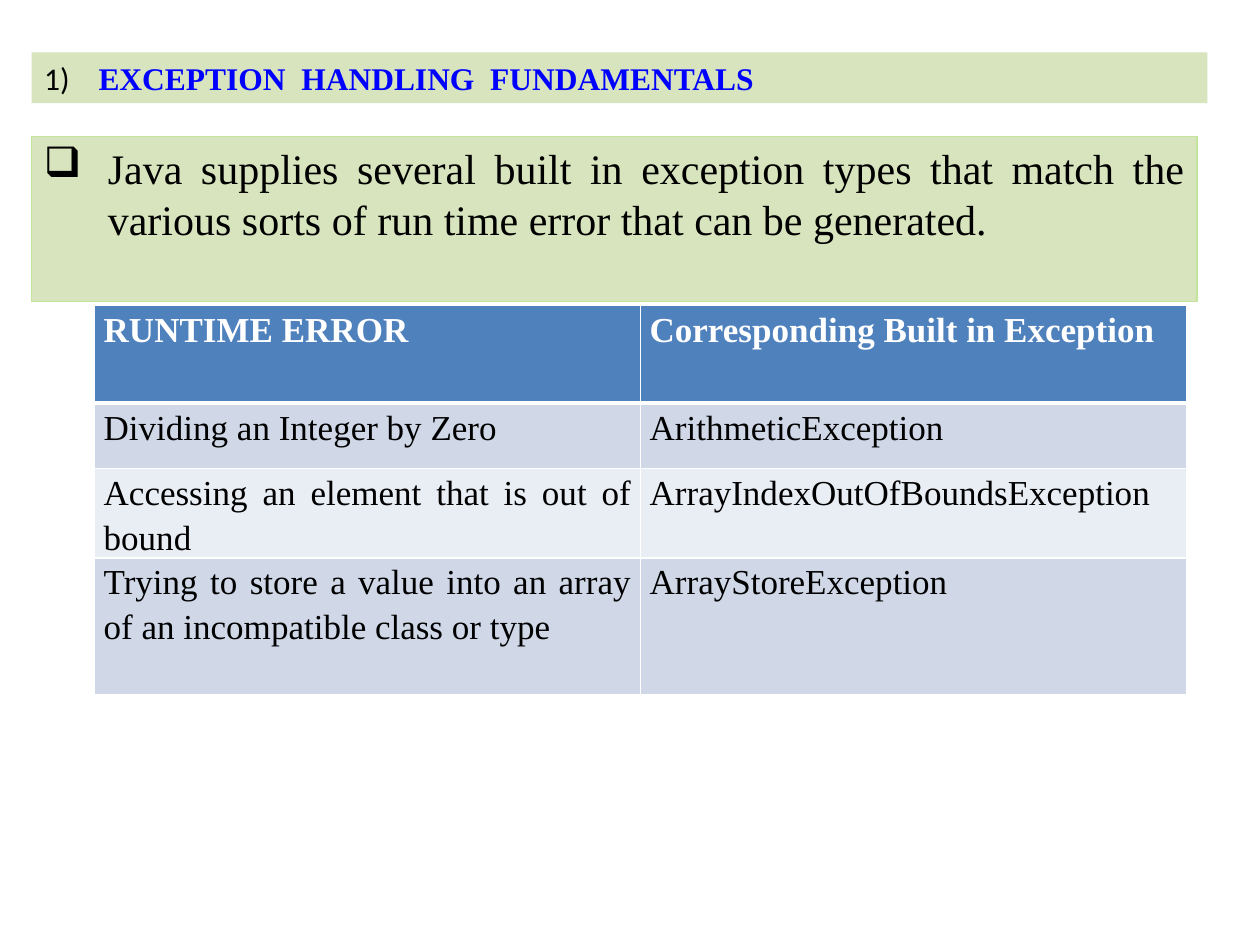
"""Build the slide on exception handling fundamentals."""
from lxml import etree
from pptx import Presentation
from pptx.dml.color import RGBColor
from pptx.enum import shapes, text
from pptx.oxml.ns import qn
from pptx.util import Pt

HUE = {"band": "D7E4BD", "edge": "C2E49C", "blue": "0000FF", "ink": "000000",
       "white": "FFFFFF", "head": "4F81BD", "odd": "D0D8E8", "even": "E9EDF4"}
SERIF = "Times New Roman"
TITLE = "EXCEPTION  HANDLING  FUNDAMENTALS"
BODY = ("Java supplies several built in exception types that match the "
        "various sorts of run time error that can be generated.")
ROWS = [
    (56, "RUNTIME ERROR", "Corresponding Built in Exception"),
    (37.5, "Dividing an Integer by Zero", "ArithmeticException"),
    (50, "Accessing an element that is out of bound",
     "ArrayIndexOutOfBoundsException"),
    (78.5, "Trying to store a value into an array of an incompatible class or type",
     "ArrayStoreException"),
]


def rgb(name):
    return RGBColor.from_string(HUE[name])


def paint(item, name):
    item.fill.solid()
    item.fill.fore_color.rgb = rgb(name)


def add_run(para, words, size, hue, font=SERIF, bold=False):
    run = para.add_run()
    run.text = words
    run.font.size, run.font.name, run.font.bold = Pt(size), font, bold
    run.font.color.rgb = rgb(hue)


def set_list(para, indent, tag, **attrs):
    props = para._p.get_or_add_pPr()
    props.set("marL", str(Pt(indent)))
    props.set("indent", str(-Pt(indent)))
    etree.SubElement(props, qn(tag), attrs)


def set_frame(shape, box):
    shape.left, shape.top, shape.width, shape.height = map(Pt, box)
    paint(shape, "band")
    frame = shape.text_frame
    frame.word_wrap = True
    frame.auto_size = text.MSO_AUTO_SIZE.NONE
    frame.vertical_anchor = text.MSO_ANCHOR.TOP
    return frame.paragraphs[0]


def set_edges(cell, base):
    props = cell._tc.get_or_add_tcPr()
    for spot, side in enumerate("LRTB"):
        width = base if side == "B" else 1
        line = etree.Element(qn("a:ln" + side), w=str(Pt(width)))
        fill = etree.SubElement(line, qn("a:solidFill"))
        etree.SubElement(fill, qn("a:srgbClr"), val=HUE["white"])
        props.insert(spot, line)


def add_grid(slide):
    high = sum(row[0] for row in ROWS)
    grid = slide.shapes.add_table(len(ROWS), 2, Pt(54), Pt(174.25),
                                  Pt(624), Pt(high)).table
    for i, (tall, *words) in enumerate(ROWS):
        grid.rows[i].height = Pt(tall)
        shade = "head" if i == 0 else ("odd" if i % 2 else "even")
        for j, label in enumerate(words):
            cell = grid.cell(i, j)
            cell.margin_left = cell.margin_right = Pt(5.25)
            cell.margin_top = cell.margin_bottom = 0
            paint(cell, shade)
            set_edges(cell, 3 if i == 0 else 1)
            para = cell.text_frame.paragraphs[0]
            para.alignment = text.PP_ALIGN.JUSTIFY
            para.line_spacing = 1.15
            add_run(para, label, 20, "ink" if i else "white", bold=i == 0)


def main():
    deck = Presentation()
    deck.slide_width, deck.slide_height = Pt(720), Pt(540)
    slide = deck.slides.add_slide(deck.slide_layouts[5])

    para = set_frame(slide.shapes.title, (18, 30, 672, 29))
    para.alignment = text.PP_ALIGN.LEFT
    set_list(para, 27, "a:buAutoNum", type="arabicParenR")
    add_run(para, " ", 18, "ink", "Calibri")
    add_run(para, TITLE, 18, "blue", bold=True)

    panel = slide.shapes.add_shape(shapes.MSO_SHAPE.RECTANGLE, 0, 0, 0, 0)
    panel.shadow.inherit = False
    panel.line.color.rgb = rgb("edge")
    panel.line.width = Pt(0.75)
    para = set_frame(panel, (18, 78, 666, 94.5))
    para.alignment = text.PP_ALIGN.JUSTIFY
    set_list(para, 36.5, "a:buChar", char="❑")
    add_run(para, BODY, 24, "ink")

    add_grid(slide)
    deck.save("out.pptx")


if __name__ == "__main__":
    main()
